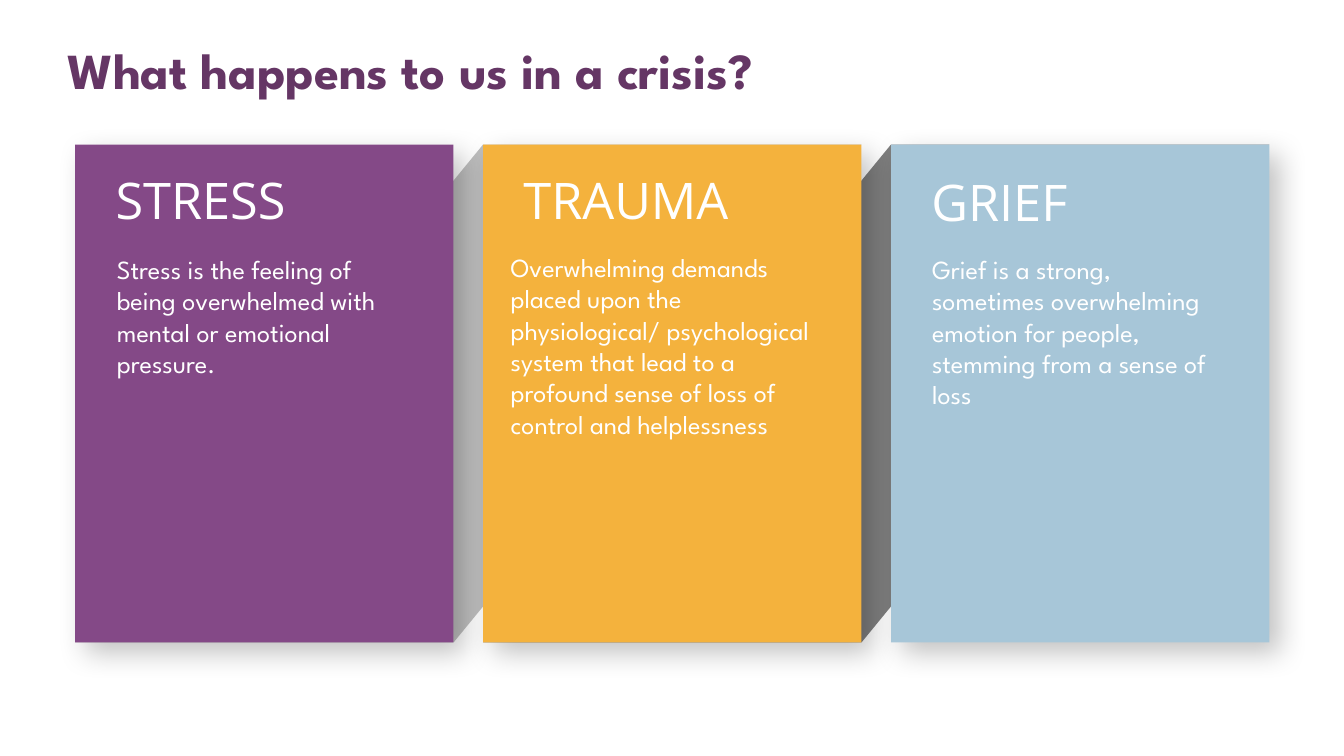
from lxml import etree
from pptx import Presentation
from pptx.dml.color import RGBColor
from pptx.enum.shapes import MSO_SHAPE
from pptx.enum.text import MSO_ANCHOR, MSO_AUTO_SIZE
from pptx.oxml.ns import qn
from pptx.util import Pt

PX = 4572
RECT = MSO_SHAPE.RECTANGLE
TOP, MIDDLE = MSO_ANCHOR.TOP, MSO_ANCHOR.MIDDLE
GROW, FIXED = MSO_AUTO_SIZE.SHAPE_TO_FIT_TEXT, MSO_AUTO_SIZE.NONE

WHITE = RGBColor(0xFF, 0xFF, 0xFF)
PLUM = RGBColor(0x65, 0x36, 0x65)
PURPLE = RGBColor(0x84, 0x49, 0x87)
AMBER = RGBColor(0xF4, 0xB2, 0x3D)
BLUE = RGBColor(0xA7, 0xC6, 0xD8)
SILVER = RGBColor(0xBF, 0xBF, 0xBF)
GRAY = RGBColor(0x7F, 0x7F, 0x7F)

SPARTAN, SANS = "League Spartan", "Open Sans"

CARDS = [
    (PURPLE, "STRESS", (60, 29),
     "Stress is the feeling of being overwhelmed with mental or emotional pressure.",
     (48, 154, 468, 204)),
    (AMBER, "TRAUMA", (60, 29),
     "Overwhelming demands placed upon the physiological/ psychological system "
     "that lead to a profound sense of loss of control and helplessness",
     (27, 151, 508, 440)),
    (BLUE, "GRIEF", (60, 31),
     "Grief is a strong, sometimes overwhelming emotion for people, "
     "stemming from a sense of loss",
     (47, 154, 468, 250)),
]


def scale(*nums):
    return [num * PX for num in nums]


def add_text(slide, box, text, font, size, color, pad, bold=False,
             anchor=TOP, fit=GROW):
    frame = slide.shapes.add_textbox(*scale(*box)).text_frame
    frame.word_wrap = True
    frame.auto_size = fit
    frame.vertical_anchor = anchor
    side, edge = scale(*pad)
    frame.margin_left = frame.margin_right = side
    frame.margin_top = frame.margin_bottom = edge
    run = frame.paragraphs[0].add_run()
    run.text = text
    run.font.name = font
    run.font.size = Pt(size)
    run.font.bold = bold
    run.font.color.rgb = color


def add_shade(shape):
    shape.shadow.inherit = False
    effects = shape._element.spPr.find(qn("a:effectLst"))
    shade = etree.SubElement(
        effects, qn("a:outerShdw"), blurRad=str(Pt(15)), dist=str(Pt(8)),
        dir=str(45 * 60000), algn="tl", rotWithShape="0")
    black = etree.SubElement(shade, qn("a:srgbClr"), val="000000")
    etree.SubElement(black, qn("a:alpha"), val="24000")


def add_title(slide, box):
    add_text(slide, box, "What happens to us in a crisis?", SPARTAN, 27, PLUM,
             (0, 10), True, MIDDLE, FIXED)


def add_fold(slide, box, step, color):
    left, top, width, height = box
    base = top + height
    path = slide.shapes.build_freeform(left, base, scale=PX)
    path.add_line_segments([
        (left + step, top), (left + step + width, top), (left + width, base)])
    fold = path.convert_to_shape()
    fold.shadow.inherit = False
    fold.fill.solid()
    fold.fill.fore_color.rgb = color
    fold.line.fill.background()


def add_card(slide, box, color, head, head_at, body, body_box):
    left, top = box[:2]
    card = slide.shapes.add_shape(RECT, *scale(*box))
    card.fill.solid()
    card.fill.fore_color.rgb = color
    card.line.fill.background()
    add_shade(card)
    x, y = head_at
    add_text(slide, (left + x, top + y, 454, 106), head, SANS, 27, WHITE, (0, 8))
    x, y, width, height = body_box
    add_text(slide, (left + x, top + y, width, height), body, SPARTAN, 14,
             WHITE, (14, 8))


def add_panel(slide, box):
    left, top, width, height = box
    wide = 563
    step = (width - wide) // (len(CARDS) - 1)
    boxes = [(left + i * step, top, wide, height) for i in range(len(CARDS))]
    for spot, color in ((boxes[1], GRAY), (boxes[0], SILVER)):
        add_fold(slide, spot, step, color)
    for spot, card in zip(boxes, CARDS):
        add_card(slide, spot, *card)


def main():
    deck = Presentation()
    deck.slide_width, deck.slide_height = scale(2000, 1125)
    slide = deck.slides.add_slide(deck.slide_layouts[6])
    add_title(slide, (100, 45, 1800, 116))
    add_panel(slide, (112, 215, 1777, 741))
    deck.save("out.pptx")


if __name__ == "__main__":
    main()
